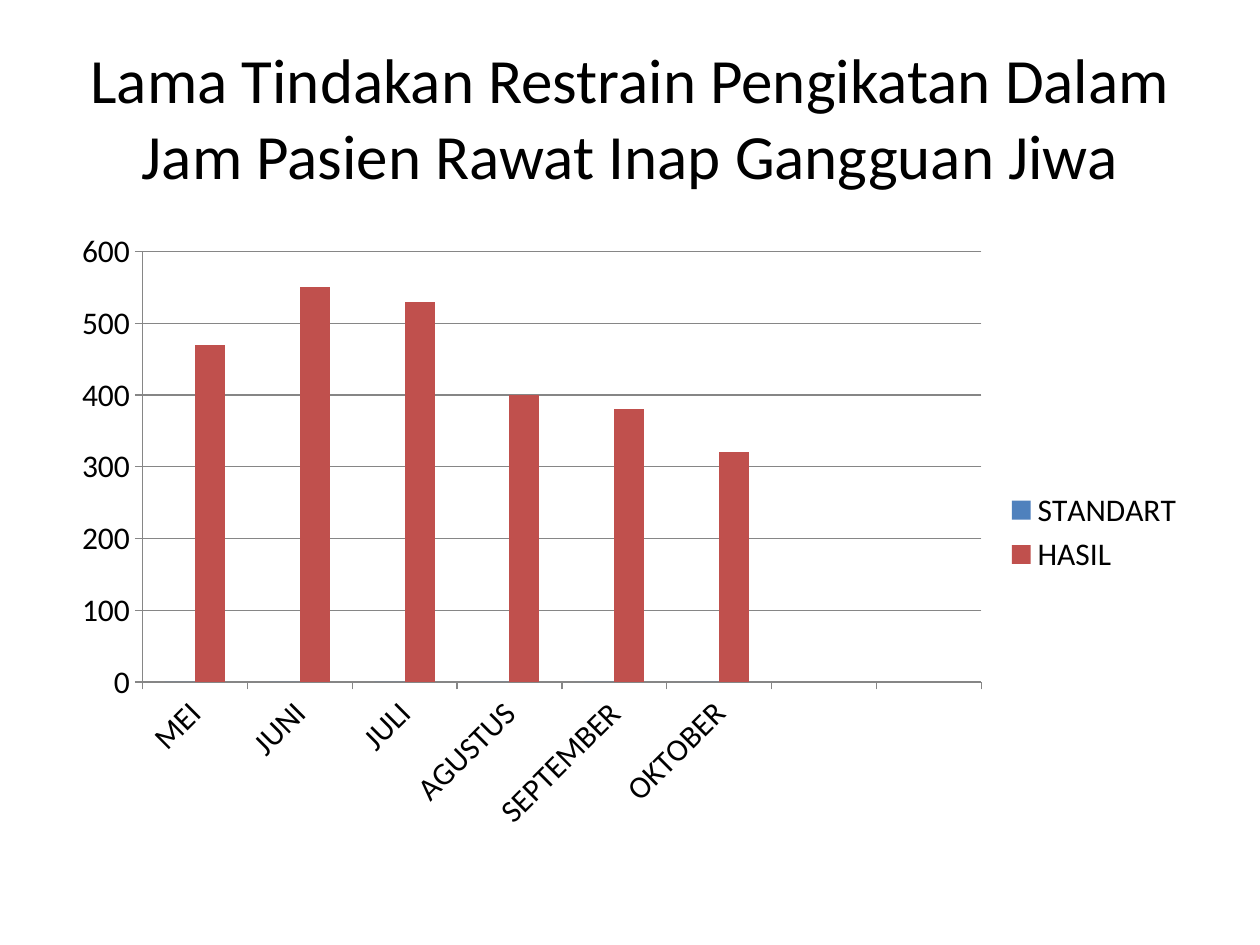
from lxml import etree
from pptx import Presentation
from pptx.chart.data import CategoryChartData
from pptx.dml.color import RGBColor
from pptx.enum.chart import XL_CHART_TYPE as ChartType
from pptx.enum.chart import XL_LEGEND_POSITION as LegendPosition
from pptx.enum.chart import XL_TICK_MARK as TickMark
from pptx.enum.text import MSO_ANCHOR as Anchor
from pptx.enum.text import PP_ALIGN as Align
from pptx.oxml.ns import qn
from pptx.util import Pt

BLACK = RGBColor(0x00, 0x00, 0x00)
GRAY = RGBColor(0x86, 0x86, 0x86)
BLUE = RGBColor(0x4F, 0x81, 0xBD)
RED = RGBColor(0xC0, 0x50, 0x4D)
FONT = "Calibri"

TITLE = "Lama Tindakan Restrain Pengikatan Dalam Jam Pasien Rawat Inap Gangguan Jiwa"
# The last two categories are empty slots
MONTHS = ["MEI", "JUNI", "JULI", "AGUSTUS", "SEPTEMBER", "OKTOBER", "", ""]
SERIES = [
    ("STANDART", [0, 0, 0, 0, 0, 0, None, None], BLUE),
    ("HASIL", [470, 550, 530, 400, 380, 320, None, None], RED),
]

# Boxes: left, top, width, height in points
TITLE_BOX = (36, 21.6, 648, 90)
CHART_BOX = (36, 126, 648, 356.4)
# Inner plot area as fractions of the chart box
PLOT_AREA = {"x": 0.07, "y": 0.05, "w": 0.74, "h": 0.69}


def set_format(target, **values):
    for name, value in values.items():
        setattr(target, name, value)


def set_font(font, size):
    set_format(font, name=FONT, size=Pt(size), bold=False)
    font.color.rgb = BLACK


def add_title(slide, box):
    title = slide.shapes.title
    left, top, width, height = map(Pt, box)
    set_format(title, left=left, top=top, width=width, height=height)
    frame = title.text_frame
    set_format(frame, text=TITLE, word_wrap=True, vertical_anchor=Anchor.MIDDLE)
    paragraph = frame.paragraphs[0]
    paragraph.alignment = Align.CENTER
    set_font(paragraph.runs[0].font, 36)


def set_plot_layout(chart):
    """Fix the inner plot area inside the chart."""
    plot_area = chart.plots[0]._element.getparent()
    for old_layout in plot_area.findall(qn("c:layout")):
        plot_area.remove(old_layout)
    layout = etree.Element(qn("c:layout"))
    manual = etree.SubElement(layout, qn("c:manualLayout"))
    settings = {"layoutTarget": "inner", "xMode": "edge", "yMode": "edge", **PLOT_AREA}
    for name, value in settings.items():
        etree.SubElement(manual, qn(f"c:{name}")).set("val", str(value))
    plot_area.insert(0, layout)


def add_bar_chart(slide, box):
    data = CategoryChartData()
    data.categories = MONTHS
    for name, values, _ in SERIES:
        data.add_series(name, values)
    chart = slide.shapes.add_chart(ChartType.COLUMN_CLUSTERED, *map(Pt, box), data).chart
    chart.has_title = False
    set_font(chart.font, 18)
    set_plot_layout(chart)

    # Columns
    plot = chart.plots[0]
    set_format(plot, gap_width=150, overlap=0, vary_by_categories=False)
    for series, (_, _, color) in zip(plot.series, SERIES):
        series.format.fill.solid()
        series.format.fill.fore_color.rgb = color

    # Axes
    category_axis, value_axis = chart.category_axis, chart.value_axis
    set_format(value_axis, minimum_scale=0, maximum_scale=600, major_unit=100,
               has_major_gridlines=True)
    for axis in (category_axis, value_axis):
        set_format(axis, major_tick_mark=TickMark.OUTSIDE, minor_tick_mark=TickMark.NONE)
        set_font(axis.tick_labels.font, 18)
    for part in (category_axis, value_axis, value_axis.major_gridlines):
        part.format.line.color.rgb = GRAY
        part.format.line.width = Pt(0.75)
    label_body = category_axis._element.find(qn("c:txPr")).find(qn("a:bodyPr"))
    label_body.set("rot", str(-45 * 60000))

    # Legend
    chart.has_legend = True
    set_format(chart.legend, position=LegendPosition.RIGHT, include_in_layout=False)
    set_font(chart.legend.font, 18)


def main():
    presentation = Presentation()
    set_format(presentation, slide_width=Pt(720), slide_height=Pt(540))
    slide = presentation.slides.add_slide(presentation.slide_layouts.get_by_name("Title Only"))
    add_title(slide, TITLE_BOX)
    add_bar_chart(slide, CHART_BOX)
    presentation.save("out.pptx")


if __name__ == "__main__":
    main()
